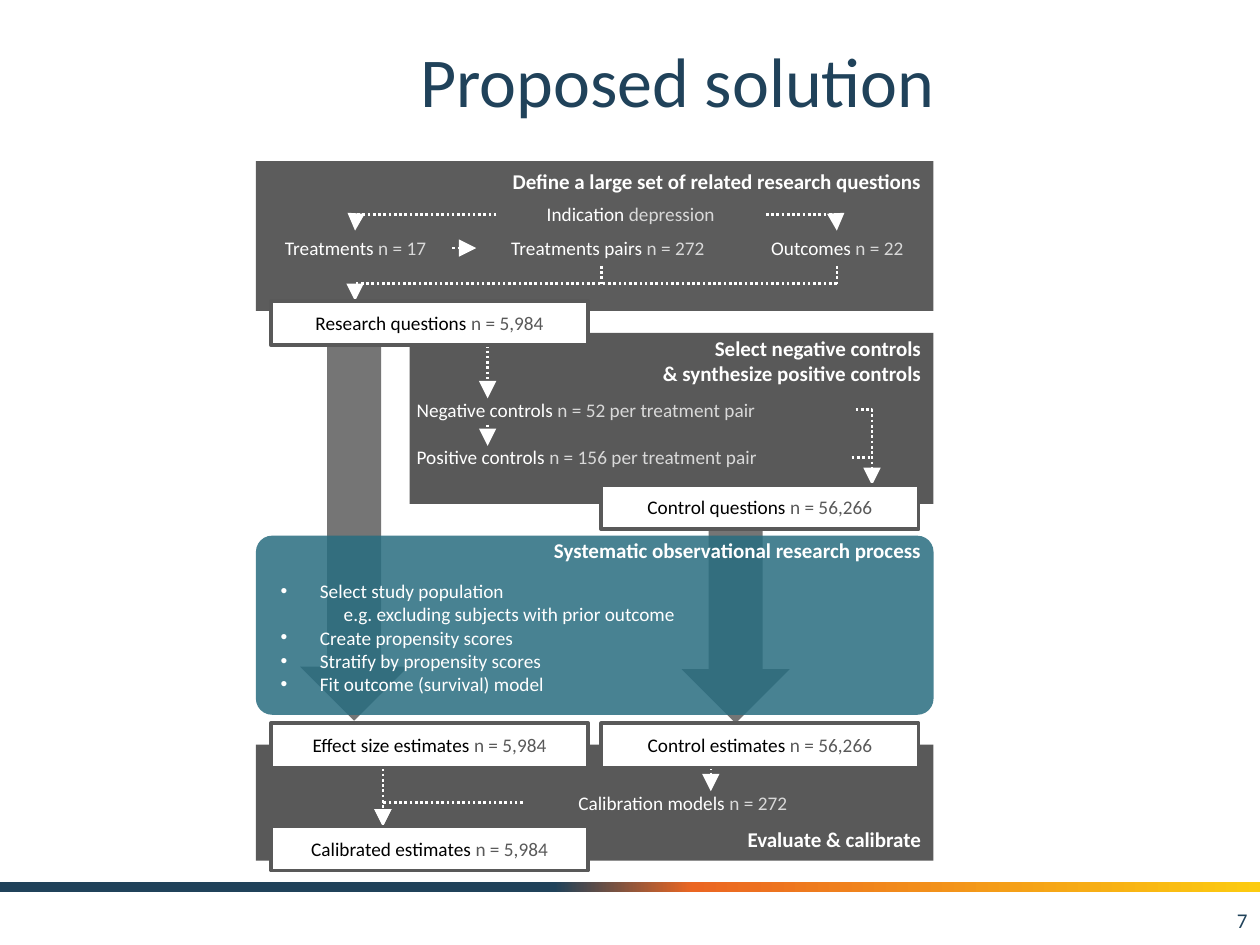
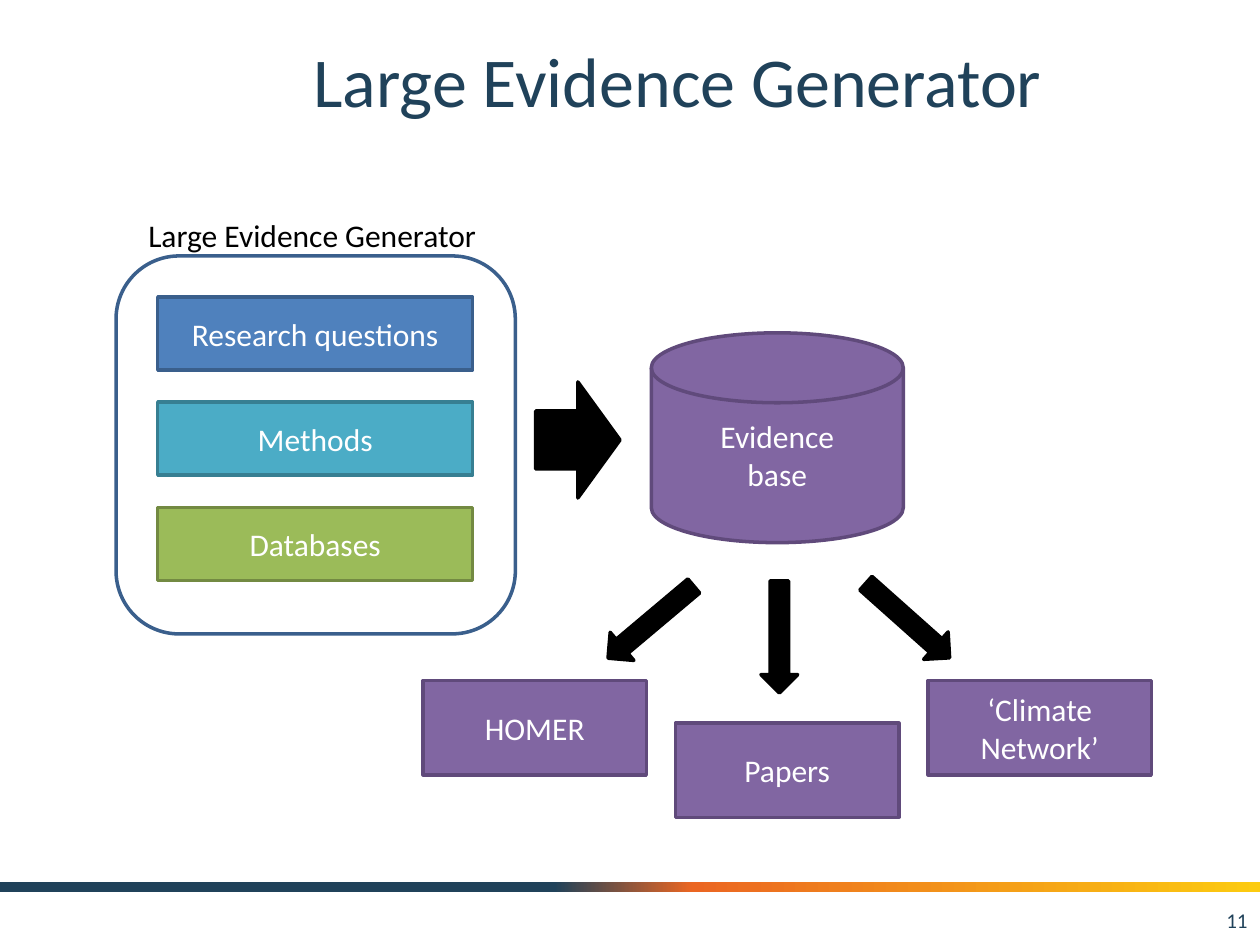
from lxml import etree
from pptx import Presentation
from pptx.dml.color import RGBColor
from pptx.enum.dml import MSO_LINE
from pptx.enum.shapes import MSO_CONNECTOR, MSO_SHAPE
from pptx.enum.text import MSO_ANCHOR, PP_ALIGN
from pptx.oxml import parse_xml
from pptx.oxml.ns import nsdecls, qn
from pptx.util import Cm, Pt

FONT = "Calibri"
NAVY, WHITE, BLACK = "20425A", "FFFFFF", "000000"
GRAY, PALE_GRAY, ARROW_GRAY, DARK_GRAY = "595959", "D9D9D9", "5D5D5D", "404040"
TEAL = "286D80"
PURPLE, PURPLE_EDGE = "8166A2", "604A7B"
BLUE, BLUE_EDGE = "4F81BD", "3A5F8C"
BAND_STOPS = [(44, NAVY), (55, "EB6622"), (100, "FCCB10")]


def color(hex_string):
    return RGBColor.from_string(hex_string)


def write_text(shape, *lines, size=11, font_color=WHITE, detail_color=PALE_GRAY,
               bold=False, align=PP_ALIGN.CENTER, anchor=MSO_ANCHOR.MIDDLE, wrap=True):
    """Write one paragraph per line; a line is a string or a (label, detail) pair."""
    frame = shape.text_frame
    frame.word_wrap = wrap
    frame.vertical_anchor = anchor
    for index, line in enumerate(lines):
        paragraph = frame.paragraphs[0] if index == 0 else frame.add_paragraph()
        paragraph.alignment = align
        parts = (line,) if isinstance(line, str) else (line[0] + " ", line[1])
        for part, part_color in zip(parts, (font_color, detail_color)):
            run = paragraph.add_run()
            run.text = part
            run.font.name = FONT
            run.font.size = Pt(size)
            run.font.bold = bold
            run.font.color.rgb = color(part_color)
    return frame


class SlideBuilder:
    def __init__(self):
        self.presentation = Presentation()
        self.presentation.slide_width = Cm(25.4)
        self.presentation.slide_height = Cm(19.05)
        self.slide = None

    def start_slide(self, title, number):
        self.slide = self.presentation.slides.add_slide(self.presentation.slide_layouts[6])
        self.band()
        self.label(title, 3.18, 0.43, 20.96, 2.34, size=40, font_color=NAVY)
        self.label(number, 19.48, 18.03, 5.92, 1.02, size=12, font_color=NAVY,
                   align=PP_ALIGN.RIGHT)

    def band(self):
        band = self.shape(MSO_SHAPE.RECTANGLE, 0, 17.78, 25.4, 0.2, NAVY)
        stops = "".join(f'<a:gs pos="{position * 1000}"><a:srgbClr val="{stop}"/></a:gs>'
                        for position, stop in BAND_STOPS)
        gradient = parse_xml(f'<a:gradFill {nsdecls("a")} rotWithShape="1">'
                             f'<a:gsLst>{stops}</a:gsLst><a:lin ang="0"/></a:gradFill>')
        properties = band._element.spPr
        properties.replace(properties.find(qn("a:solidFill")), gradient)

    def shape(self, kind, left, top, width, height, fill=None, line=None,
              opacity=100, rotation=0):
        shape = self.slide.shapes.add_shape(kind, Cm(left), Cm(top), Cm(width), Cm(height))
        shape.shadow.inherit = False
        shape.rotation = rotation
        if fill:
            shape.fill.solid()
            shape.fill.fore_color.rgb = color(fill)
            if opacity < 100:
                fill_color = shape._element.spPr.find(qn("a:solidFill"))[0]
                etree.SubElement(fill_color, qn("a:alpha"), val=str(opacity * 1000))
        else:
            shape.fill.background()
        if line:
            shape.line.color.rgb = color(line)
            shape.line.width = Pt(2)
        else:
            shape.line.fill.background()
        return shape

    def label(self, text, left, top, width, height=0.71, **text_format):
        box = self.slide.shapes.add_textbox(Cm(left), Cm(top), Cm(width), Cm(height))
        write_text(box, text, **text_format)

    def heading(self, *lines, top):
        """Write a bold heading along the right edge of a panel."""
        box = self.slide.shapes.add_textbox(Cm(6.82), Cm(top), Cm(12), Cm(0.76))
        write_text(box, *lines, size=12, bold=True, align=PP_ALIGN.RIGHT,
                   anchor=MSO_ANCHOR.TOP)

    def result_box(self, name, count, left, top):
        box = self.shape(MSO_SHAPE.RECTANGLE, left, top, 6.4, 0.89, WHITE, GRAY)
        write_text(box, (name, count), font_color=BLACK, detail_color=GRAY)

    def text_block(self, kind, text, left, top, width, height, fill, line):
        block = self.shape(kind, left, top, width, height, fill, line)
        write_text(block, *text.split("\n"), size=18)

    def bullet_list(self, items, left, top, width, height):
        """Write (level, text) items; only level 0 has a bullet."""
        box = self.slide.shapes.add_textbox(Cm(left), Cm(top), Cm(width), Cm(height))
        frame = write_text(box, *[text for _, text in items], align=PP_ALIGN.LEFT)
        for paragraph, (level, _) in zip(frame.paragraphs, items):
            paragraph.level = level
            properties = paragraph._p.get_or_add_pPr()
            properties.set("marL", str(Cm(0.79 if level == 0 else 1.27)))
            properties.set("indent", str(Cm(-0.79 if level == 0 else 0)))
            if level == 0:
                etree.SubElement(properties, qn("a:buFont"), typeface="Arial")
                etree.SubElement(properties, qn("a:buChar"), char="•")

    def dotted_line(self, start, end, arrow=True):
        """Join two points; when neither axis is shared, go across and then down."""
        bent = start[0] != end[0] and start[1] != end[1]
        kind = MSO_CONNECTOR.ELBOW if bent else MSO_CONNECTOR.STRAIGHT
        connector = self.slide.shapes.add_connector(
            kind, *[Cm(value) for value in (*start, *end)])
        connector.line.color.rgb = color(WHITE)
        connector.line.width = Pt(1.5)
        connector.line.dash_style = MSO_LINE.ROUND_DOT
        properties = connector._element.spPr
        if bent:
            properties.find(qn("a:prstGeom")).set("prst", "bentConnector2")
        if arrow:
            etree.SubElement(properties.find(qn("a:ln")), qn("a:tailEnd"),
                             type="triangle", w="lg", len="lg")
        etree.SubElement(properties, qn("a:effectLst"))


def build_solution(builder):
    builder.start_slide("Proposed solution", "7")
    panel_left, panel_width = 5.16, 13.66
    left_box, right_box = 5.46, 12.12

    for left, top, height in [(13.74, 10.67, 3.91), (6.05, 6.91, 7.62)]:
        builder.shape(MSO_SHAPE.DOWN_ARROW, left, top, 2.18, height, ARROW_GRAY, opacity=85)
    builder.shape(MSO_SHAPE.RECTANGLE, panel_left, 3.25, panel_width, 3.02,
                  DARK_GRAY, opacity=85)
    builder.shape(MSO_SHAPE.RECTANGLE, 8.26, 6.71, 10.56, 3.45, GRAY)
    process = builder.shape(MSO_SHAPE.ROUNDED_RECTANGLE, panel_left, 10.8, panel_width, 3.61,
                            TEAL, opacity=85)
    process.adjustments[0] = 0.09
    builder.shape(MSO_SHAPE.RECTANGLE, panel_left, 15.01, panel_width, 2.34, GRAY)

    builder.heading("Define a large set of related research questions", top=3.28)
    builder.heading("Select negative controls", "& synthesize positive controls", top=6.63)
    builder.heading("Systematic observational research process", top=10.72)
    builder.heading("Evaluate & calibrate", top=16.54)

    for name, detail, left, top, width in [
        ("Indication", "depression", 10.01, 3.96, 5.41),
        ("Treatments", "n = 17", 4.67, 4.65, 5),
        ("Treatments pairs", "n = 272", 9.5, 4.65, 5.51),
        ("Outcomes", "n = 22", 14.38, 4.65, 5),
        ("Calibration models", "n = 272", 10.54, 15.82, 6.45),
    ]:
        builder.label((name, detail), left, top, width)
    for name, detail, top in [
        ("Negative controls", "n = 52 per treatment pair", 7.9),
        ("Positive controls", "n = 156 per treatment pair", 8.86),
    ]:
        builder.label((name, detail), 8.15, top, 9.09, align=PP_ALIGN.LEFT)

    builder.bullet_list([
        (0, "Select study population"),
        (1, "e.g. excluding subjects with prior outcome"),
        (0, "Create propensity scores"),
        (0, "Stratify by propensity scores"),
        (0, "Fit outcome (survival) model"),
    ], 5.41, 11.76, 13.41, 2.18)

    for start, end in [
        ((10.01, 4.32), (7.16, 4.65)),
        ((15.44, 4.32), (16.87, 4.65)),
        ((9.12, 5), (9.6, 5)),
        ((16.87, 5.72), (7.16, 6.07)),
        ((9.83, 6.96), (9.83, 8.03)),
        ((9.83, 8.56), (9.83, 8.99)),
        ((17.25, 8.26), (17.58, 9.78)),
        ((7.72, 15.49), (7.72, 16.66)),
        ((14.33, 15.47), (14.33, 15.95)),
        ((10.54, 16.18), (7.72, 16.66)),
    ]:
        builder.dotted_line(start, end)
    for start, end in [
        ((16.87, 5.36), (16.87, 5.72)),
        ((12.12, 5.36), (12.12, 5.72)),
        ((17.17, 9.22), (17.58, 9.22)),
    ]:
        builder.dotted_line(start, end, arrow=False)

    for name, count, left, top in [
        ("Research questions", "n = 5,984", left_box, 6.07),
        ("Control questions", "n = 56,266", right_box, 9.78),
        ("Effect size estimates", "n = 5,984", left_box, 14.58),
        ("Control estimates", "n = 56,266", right_box, 14.58),
        ("Calibrated estimates", "n = 5,984", left_box, 16.66),
    ]:
        builder.result_box(name, count, left, top)


def build_generator(builder):
    builder.start_slide("Large Evidence Generator", "11")
    inputs = [
        ("Research questions", BLUE, BLUE_EDGE),
        ("Methods", "4BACC6", "377F92"),
        ("Databases", "9BBB59", "738A42"),
    ]
    for row, (name, fill, edge) in enumerate(inputs):
        builder.text_block(MSO_SHAPE.RECTANGLE, name, 3.18, 5.99 + row * 2.12, 6.35, 1.47,
                           fill, edge)
    builder.shape(MSO_SHAPE.ROUNDED_RECTANGLE, 2.34, 5.16, 8.05, 7.62, line=BLUE_EDGE)
    builder.label("Large Evidence Generator", 2.74, 4.24, 7.21, 1.02, size=18,
                  font_color=BLACK, align=PP_ALIGN.LEFT, anchor=MSO_ANCHOR.TOP, wrap=False)

    builder.shape(MSO_SHAPE.RIGHT_ARROW, 10.8, 7.7, 1.7, 2.34, BLACK, BLACK)
    builder.text_block(MSO_SHAPE.FLOWCHART_MAGNETIC_DISK, "Evidence\nbase",
                       13.13, 6.71, 5.08, 4.23, PURPLE, PURPLE_EDGE)

    outputs = [
        ("HOMER", 13.72, 11.99, 12.17, 139.9),
        ("Papers", 14.58, 14.58, 12.47, 90),
        ("‘Climate Network’", 13.72, 17.17, 12.14, 41.7),
    ]
    for column, (name, top, arrow_left, arrow_top, angle) in enumerate(outputs):
        builder.shape(MSO_SHAPE.RIGHT_ARROW, arrow_left, arrow_top, 2.26, 0.74, BLACK, BLACK,
                      rotation=angle)
        builder.text_block(MSO_SHAPE.RECTANGLE, name, 8.53 + column * 5.09, top, 4.5, 1.9,
                           PURPLE, PURPLE_EDGE)


def main():
    builder = SlideBuilder()
    build_solution(builder)
    build_generator(builder)
    builder.presentation.save("out.pptx")


if __name__ == "__main__":
    main()
